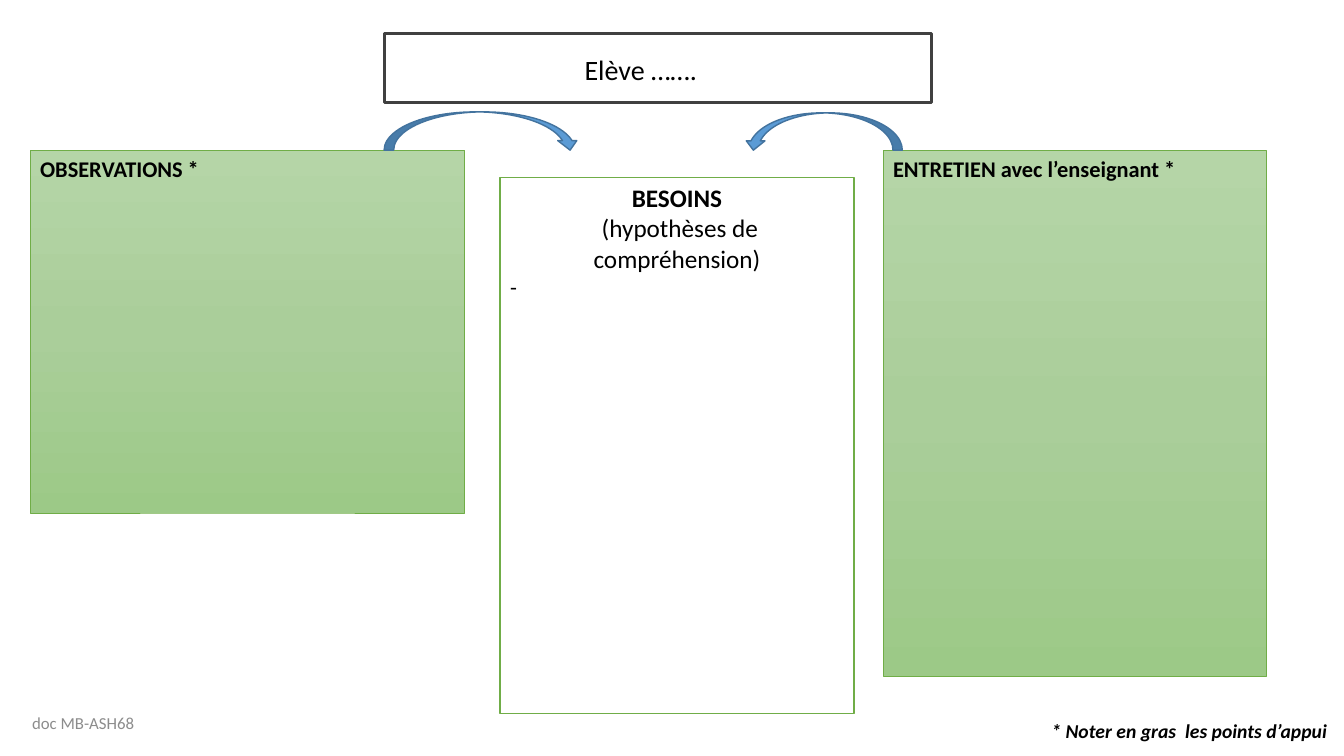
from copy import deepcopy

from pptx import Presentation
from pptx.dml.color import RGBColor
from pptx.enum.shapes import MSO_SHAPE
from pptx.enum.text import MSO_ANCHOR, PP_ALIGN
from pptx.oxml.ns import qn
from pptx.util import Inches, Pt

RECTANGLE = MSO_SHAPE.RECTANGLE
CURVED_ARROW = MSO_SHAPE.CURVED_DOWN_ARROW
LEFT, CENTER = PP_ALIGN.LEFT, PP_ALIGN.CENTER
TOP, MIDDLE = MSO_ANCHOR.TOP, MSO_ANCHOR.MIDDLE

BLACK, GREY, DARK_GREY = "000000", "8C8C8C", "404040"
GREEN, BLUE, DARK_BLUE = "70AD47", "5B9BD5", "43739E"
GREEN_GRADIENT = ("B5D5A7", "AACE9A", "9CC987")


def color(hex_value):
    """Return the RGB colour for a hex string."""
    return RGBColor.from_string(hex_value)


def set_gradient(shape, hex_values):
    """Fill a shape from top to bottom with three evenly spaced colours."""
    fill = shape.fill
    fill.gradient()
    fill.gradient_angle = 270
    stop_list = shape.element.spPr.find(".//" + qn("a:gsLst"))
    stop_list.insert(1, deepcopy(stop_list[0]))
    for index, (stop, hex_value) in enumerate(zip(fill.gradient_stops, hex_values)):
        stop.position = index / 2
        stop.color.rgb = color(hex_value)


def add_shape(slide, kind, box, line_color, line_width, fill_color=None):
    """Add an outlined preset shape, with a solid fill if a colour is given."""
    shape = slide.shapes.add_shape(kind, *map(Inches, box))
    shape.shadow.inherit = False
    shape.line.color.rgb = color(line_color)
    shape.line.width = Pt(line_width)
    if fill_color:
        shape.fill.solid()
        shape.fill.fore_color.rgb = color(fill_color)
    else:
        shape.fill.background()
    return shape


def write_text(shape, paragraphs, anchor=TOP):
    """Write paragraphs of (text, alignment, font format) into a shape."""
    frame = shape.text_frame
    frame.word_wrap = True
    frame.vertical_anchor = anchor
    for index, (text, alignment, font_format) in enumerate(paragraphs):
        paragraph = frame.add_paragraph() if index else frame.paragraphs[0]
        paragraph.alignment = alignment
        run = paragraph.add_run()
        run.text = text
        values = {"name": "Calibri", "color": BLACK, **font_format}
        run.font.color.rgb = color(values.pop("color"))
        for name, value in values.items():
            setattr(run.font, name, value)


def add_text(slide, box, text, alignment, font_format, anchor=TOP):
    """Add a text box with one paragraph."""
    text_box = slide.shapes.add_textbox(*map(Inches, box))
    write_text(text_box, [(text, alignment, font_format)], anchor)


def add_green_panel(slide, box, title):
    """Add a green gradient panel with a bold title."""
    panel = add_shape(slide, RECTANGLE, box, GREEN, 0.5)
    set_gradient(panel, GREEN_GRADIENT)
    write_text(panel, [(title, LEFT, {"size": Pt(16), "bold": True})])


def add_curved_arrow(slide, box, flipped=False):
    """Add a blue curved arrow, pointing left when flipped."""
    arrow = add_shape(slide, CURVED_ARROW, box, DARK_BLUE, 1, BLUE)
    if flipped:
        arrow.element.spPr.get_or_add_xfrm().set("flipH", "1")


def main():
    """Build the slide and save it."""
    presentation = Presentation()
    presentation.slide_width = Inches(13.33)
    presentation.slide_height = Inches(7.5)
    slide = presentation.slides.add_slide(presentation.slide_layouts[6])

    add_green_panel(slide, (0.3, 1.49, 4.31, 3.6), "OBSERVATIONS *")
    add_green_panel(slide, (8.76, 1.49, 3.8, 5.22), "ENTRETIEN avec l’enseignant *")

    needs = add_shape(slide, RECTANGLE, (4.96, 1.76, 3.51, 5.32), GREEN, 1)
    write_text(needs, [
        ("BESOINS", CENTER, {"size": Pt(18), "bold": True}),
        (" (hypothèses de compréhension)", CENTER, {"size": Pt(18)}),
        ("-", LEFT, {"size": Pt(16)}),
    ])

    add_text(slide, (3.95, 0.47, 4.81, 0.44), "Elève …….", CENTER, {"size": Pt(20)})
    add_shape(slide, RECTANGLE, (3.81, 0.33, 5.43, 0.69), DARK_GREY, 2.25)

    add_curved_arrow(slide, (3.81, 1.11, 1.94, 0.38))
    add_curved_arrow(slide, (7.38, 1.12, 1.57, 0.37), flipped=True)

    add_text(slide, (10.33, 7.08, 3, 0.34), "* Noter en gras  les points d’appui", LEFT,
             {"size": Pt(14), "bold": True, "italic": True})
    add_text(slide, (0.11, 6.97, 1.43, 0.4), "doc MB-ASH68", CENTER,
             {"size": Pt(12), "color": GREY}, MIDDLE)

    presentation.save("out.pptx")


if __name__ == "__main__":
    main()
